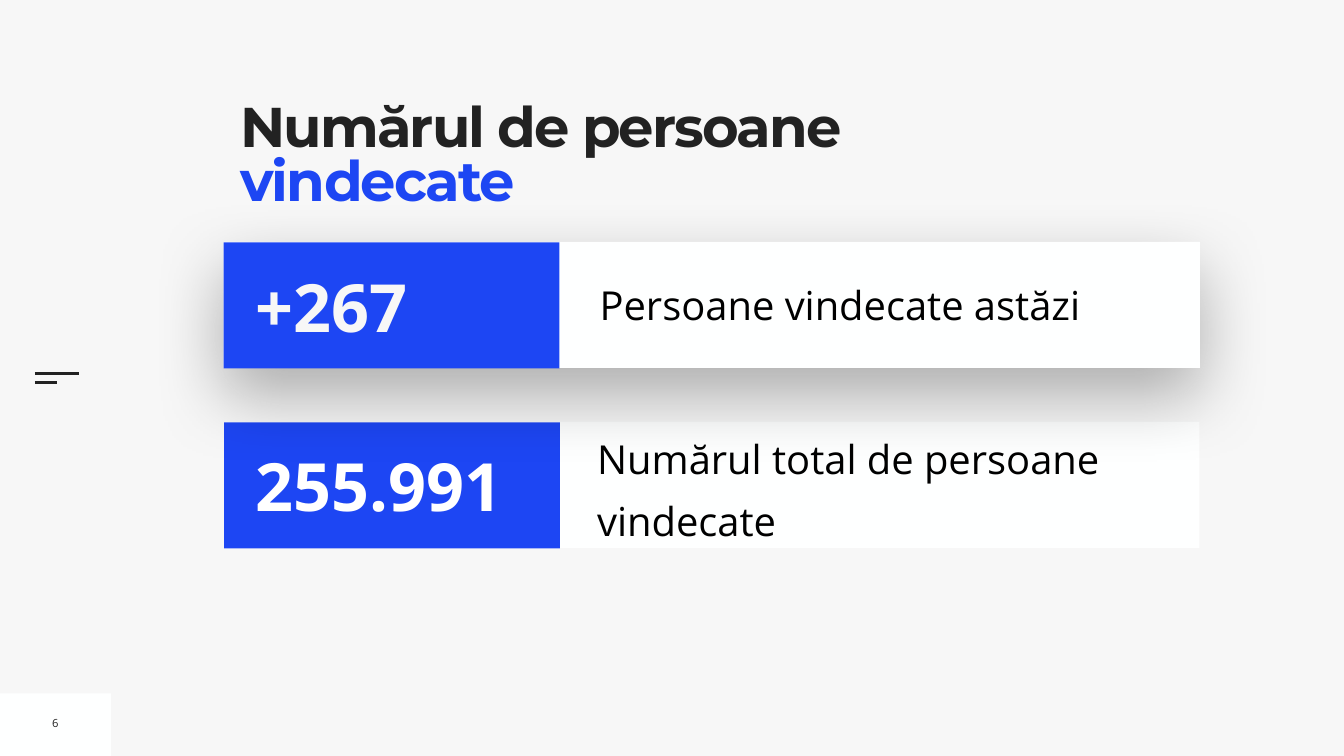
"""Build a slide with the daily and total number of recovered people."""
from dataclasses import dataclass

from lxml import etree
from pptx import Presentation
from pptx.dml.color import RGBColor
from pptx.enum.shapes import MSO_CONNECTOR, MSO_SHAPE
from pptx.enum.text import MSO_ANCHOR, MSO_AUTO_SIZE, PP_ALIGN
from pptx.oxml.ns import qn
from pptx.util import Emu, Pt

RECT = MSO_SHAPE.RECTANGLE
STRAIGHT = MSO_CONNECTOR.STRAIGHT
TOP, MIDDLE = MSO_ANCHOR.TOP, MSO_ANCHOR.MIDDLE
LEFT, CENTER = PP_ALIGN.LEFT, PP_ALIGN.CENTER
NO_AUTOSIZE = MSO_AUTO_SIZE.NONE
EMU_PER_PX = 9144
TITLE_ONLY = 5


@dataclass(frozen=True)
class Theme:
    background: str = "F7F7F7"
    panel: str = "FEFFFF"
    accent: str = "1D46F3"
    ink: str = "222222"
    label: str = "000000"
    white: str = "FFFFFF"
    heading_font: str = "Montserrat"
    body_font: str = "Open Sans"
    title_size: int = 80
    figure_size: int = 95
    label_size: int = 57
    number_size: int = 16
    rule_width: int = 3


@dataclass(frozen=True)
class Box:
    x: int
    y: int
    w: int
    h: int

    def emu(self) -> list[Emu]:
        return [px(v) for v in (self.x, self.y, self.w, self.h)]


@dataclass(frozen=True)
class Card:
    figure: str
    label: str
    panel: Box
    badge: Box
    figure_box: Box
    label_box: Box
    figure_color: str
    label_inset: int = 10
    line_spacing: float = 1.0
    space_before: int = 0
    shadow: bool = False


THEME = Theme()
CARDS = [
    Card("255.991", "Numărul total de persoane vindecate",
         Box(445, 837, 1935, 250), Box(445, 838, 666, 250),
         Box(498, 873, 603, 180), Box(1185, 839, 1195, 236),
         THEME.white, label_inset=0, line_spacing=1.3, space_before=20),
    Card("+267", "Persoane vindecate astăzi",
         Box(444, 480, 1937, 250), Box(444, 481, 666, 250),
         Box(497, 516, 603, 180), Box(1180, 547, 1176, 116),
         THEME.background, shadow=True),
]


def px(value: int) -> Emu:
    return Emu(value * EMU_PER_PX)


def rgb(color: str) -> RGBColor:
    return RGBColor.from_string(color)


def style_run(r, size: int, color: str, font: str, bold: bool = False) -> None:
    r.font.size = Pt(size)
    r.font.name = font
    r.font.bold = bold
    r.font.color.rgb = rgb(color)


def set_frame(tf, inset: int, anchor, wrap: bool = True) -> None:
    tf.auto_size = NO_AUTOSIZE
    tf.word_wrap = wrap
    tf.vertical_anchor = anchor
    tf.margin_left = tf.margin_right = px(inset)
    tf.margin_top = tf.margin_bottom = px(inset)


def add_rect(shapes, box: Box, color: str):
    sp = shapes.add_shape(RECT, *box.emu())
    sp.shadow.inherit = False
    sp.fill.solid()
    sp.fill.fore_color.rgb = rgb(color)
    sp.line.fill.background()
    return sp


def add_text(shapes, box: Box, text: str, size: int, color: str,
             bold: bool = False, inset: int = 10, wrap: bool = True, align=LEFT):
    sp = shapes.add_textbox(*box.emu())
    tf = sp.text_frame
    set_frame(tf, inset, MIDDLE, wrap)
    tf.text = text
    p = tf.paragraphs[0]
    p.alignment = align
    style_run(p.runs[0], size, color, THEME.body_font, bold)
    return p


def add_shadow(sp) -> None:
    effects = sp._element.spPr.find(qn("a:effectLst"))
    shadow = etree.SubElement(effects, qn("a:outerShdw"), blurRad=str(Pt(100)),
                              dist=str(Pt(40)), dir="5400000", rotWithShape="0")
    color = etree.SubElement(shadow, qn("a:srgbClr"), val=THEME.label)
    etree.SubElement(color, qn("a:alpha"), val="30000")


def add_rule(shapes, x: int, y: int, length: int) -> None:
    line = shapes.add_connector(STRAIGHT, px(x), px(y), px(x + length), px(y))
    line.line.color.rgb = rgb(THEME.ink)
    line.line.width = Pt(THEME.rule_width)
    etree.SubElement(line._element.spPr, qn("a:effectLst"))


def add_card(s, card: Card) -> None:
    shapes = s.shapes.add_group_shape().shapes
    panel = add_rect(shapes, card.panel, THEME.panel)
    if card.shadow:
        add_shadow(panel)
    p = add_text(shapes, card.label_box, card.label, THEME.label_size,
                 THEME.label, inset=card.label_inset)
    p.line_spacing = card.line_spacing
    p.space_before = Pt(card.space_before)
    add_rect(shapes, card.badge, THEME.accent)
    add_text(shapes, card.figure_box, card.figure, THEME.figure_size,
             card.figure_color, bold=True)


def set_title(s, box: Box, lead: str, highlight: str) -> None:
    sp = s.shapes.title
    sp.left, sp.top, sp.width, sp.height = box.emu()
    sp.fill.solid()
    sp.fill.fore_color.rgb = rgb(THEME.background)
    tf = sp.text_frame
    set_frame(tf, 0, TOP)
    tf.text = lead
    p = tf.paragraphs[0]
    p.alignment = LEFT
    p.line_spacing = 0.8
    p.add_run().text = highlight
    for r, color in zip(p.runs, (THEME.ink, THEME.accent)):
        style_run(r, THEME.title_size, color, THEME.heading_font, bold=True)
        r.font._element.set("spc", "-270")


def main() -> None:
    prs = Presentation()
    prs.slide_width, prs.slide_height = px(2667), px(1500)
    s = prs.slides.add_slide(prs.slide_layouts[TITLE_ONLY])
    s.background.fill.solid()
    s.background.fill.fore_color.rgb = rgb(THEME.background)

    add_rect(s.shapes, Box(0, 1376, 220, 124), THEME.panel)
    add_rule(s.shapes, 69, 741, 88)
    add_rule(s.shapes, 69, 759, 44)
    set_title(s, Box(477, 207, 1301, 273), "Numărul de persoane ", "vindecate")
    add_text(s.shapes, Box(93, 1409, 34, 51), "6", THEME.number_size,
             THEME.ink, wrap=False, align=CENTER)
    for card in CARDS:
        add_card(s, card)
    prs.save("out.pptx")


if __name__ == "__main__":
    main()
